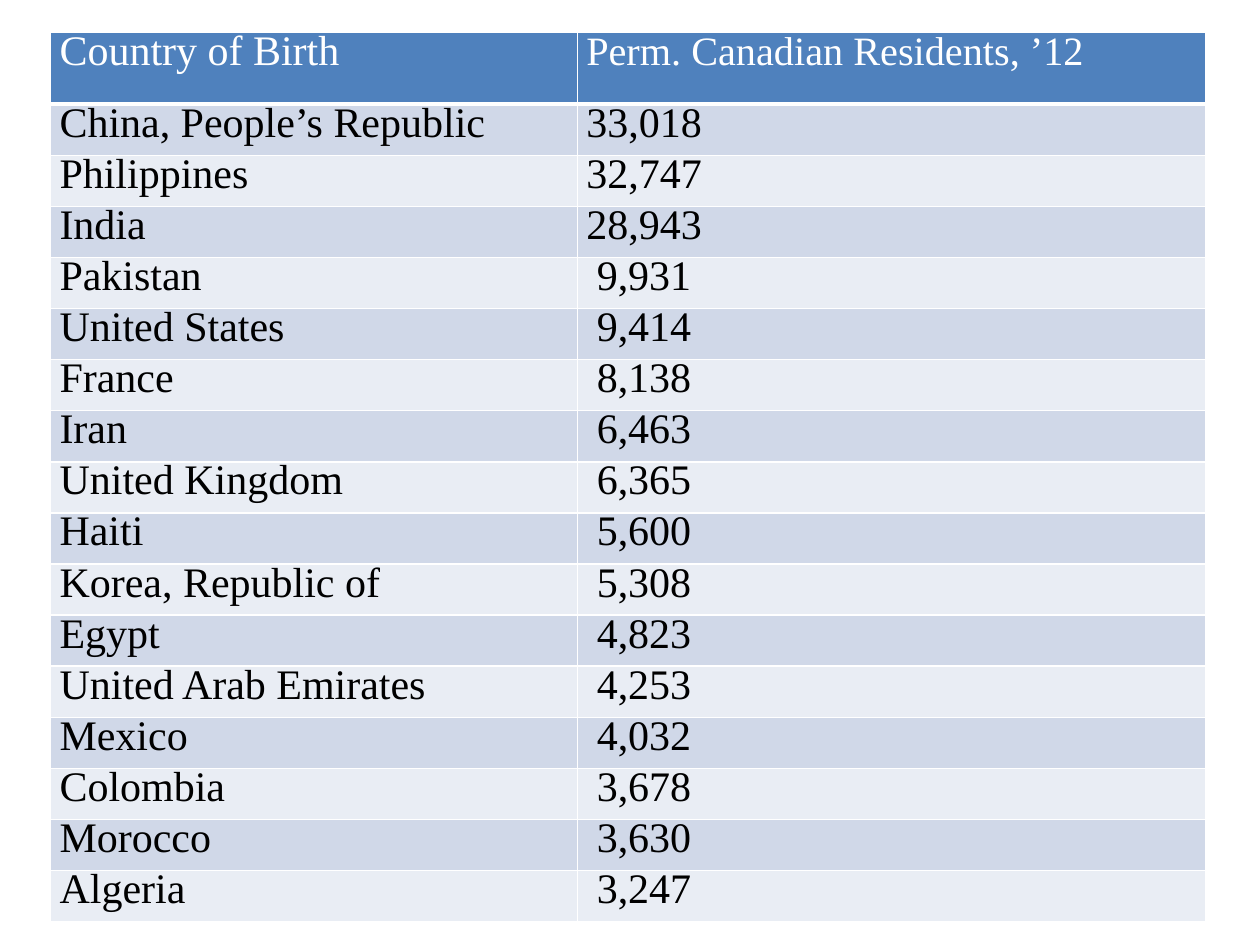
from lxml.etree import SubElement
from pptx import Presentation
from pptx.dml.color import RGBColor
from pptx.oxml.ns import qn
from pptx.util import Cm, Pt

HEADER_BLUE = RGBColor(0x4F, 0x81, 0xBD)
BAND_DARK = RGBColor(0xD0, 0xD8, 0xE8)
BAND_LIGHT = RGBColor(0xE9, 0xED, 0xF4)
WHITE = RGBColor(0xFF, 0xFF, 0xFF)
BLACK = RGBColor(0x00, 0x00, 0x00)
FONT = "Times New Roman"

HEADINGS = ("Country of Birth", "Perm. Canadian Residents, ’12")
RESIDENTS = [
    ("China, People’s Republic", 33018),
    ("Philippines", 32747),
    ("India", 28943),
    ("Pakistan", 9931),
    ("United States", 9414),
    ("France", 8138),
    ("Iran", 6463),
    ("United Kingdom", 6365),
    ("Haiti", 5600),
    ("Korea, Republic of", 5308),
    ("Egypt", 4823),
    ("United Arab Emirates", 4253),
    ("Mexico", 4032),
    ("Colombia", 3678),
    ("Morocco", 3630),
    ("Algeria", 3247),
]


def add_borders(cell, bottom_width):
    """Draw white cell edges; call before the fill, which must follow them in the XML."""
    properties = cell._tc.get_or_add_tcPr()
    for side, width in (("L", 1), ("R", 1), ("T", 1), ("B", bottom_width)):
        line = SubElement(properties, qn(f"a:ln{side}"), w=str(Pt(width)))
        fill = SubElement(line, qn("a:solidFill"))
        SubElement(fill, qn("a:srgbClr"), val=str(WHITE))


def fill_cell(cell, text, background, color, size=24, bottom_width=1):
    add_borders(cell, bottom_width)
    cell.fill.solid()
    cell.fill.fore_color.rgb = background
    cell.margin_left = cell.margin_right = Cm(0.18)
    cell.margin_top = cell.margin_bottom = 0
    cell.text_frame.text = text
    para = cell.text_frame.paragraphs[0]
    para.line_spacing = Pt(24)
    font = para.runs[0].font
    font.name = FONT
    font.size = Pt(size)
    font.bold = False
    font.color.rgb = color


def add_residents_table(page, left, top, width, height):
    frame = page.shapes.add_table(len(RESIDENTS) + 1, 2, left, top, width, height)
    table = frame.table
    table.columns[0].width = Cm(10.62)
    table.columns[1].width = width - Cm(10.62)

    header_height = Cm(1.44)
    row_height = (height - header_height) // len(RESIDENTS)
    for index, row in enumerate(table.rows):
        row.height = row_height if index else header_height

    for column, (heading, size) in enumerate(zip(HEADINGS, (24, 23))):
        fill_cell(table.cell(0, column), heading, HEADER_BLUE, WHITE, size, 3)
    for index, (country, count) in enumerate(RESIDENTS, start=1):
        band = BAND_DARK if index % 2 else BAND_LIGHT
        for column, text in enumerate((country, f"{count:>6,}")):
            fill_cell(table.cell(index, column), text, band, BLACK)


def main():
    deck = Presentation()
    deck.slide_width = Cm(25.4)
    deck.slide_height = Cm(19.05)
    page = deck.slides.add_slide(deck.slide_layouts[6])
    add_residents_table(page, Cm(1.02), Cm(0.66), Cm(23.29), Cm(17.92))
    deck.save("out.pptx")


if __name__ == "__main__":
    main()
